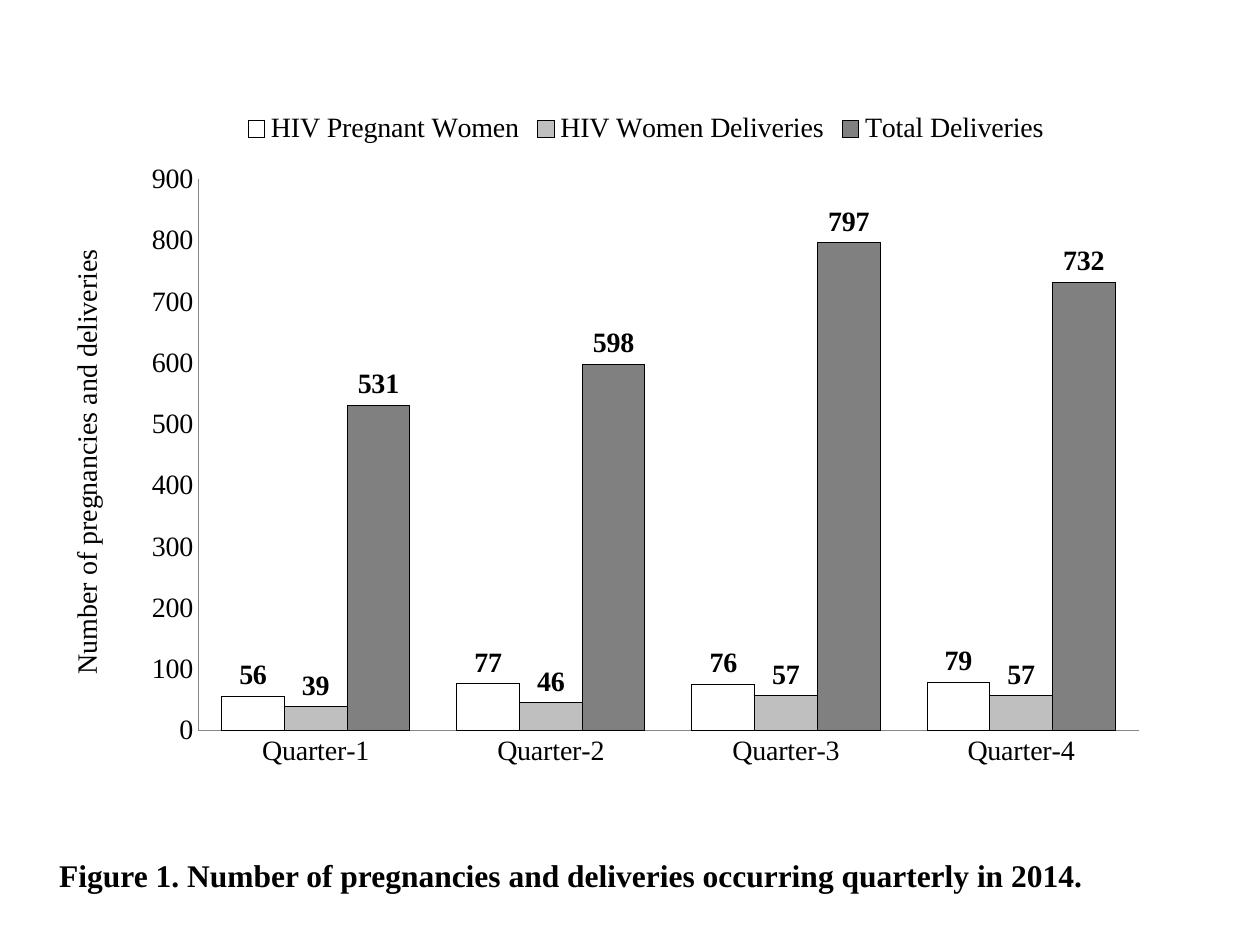
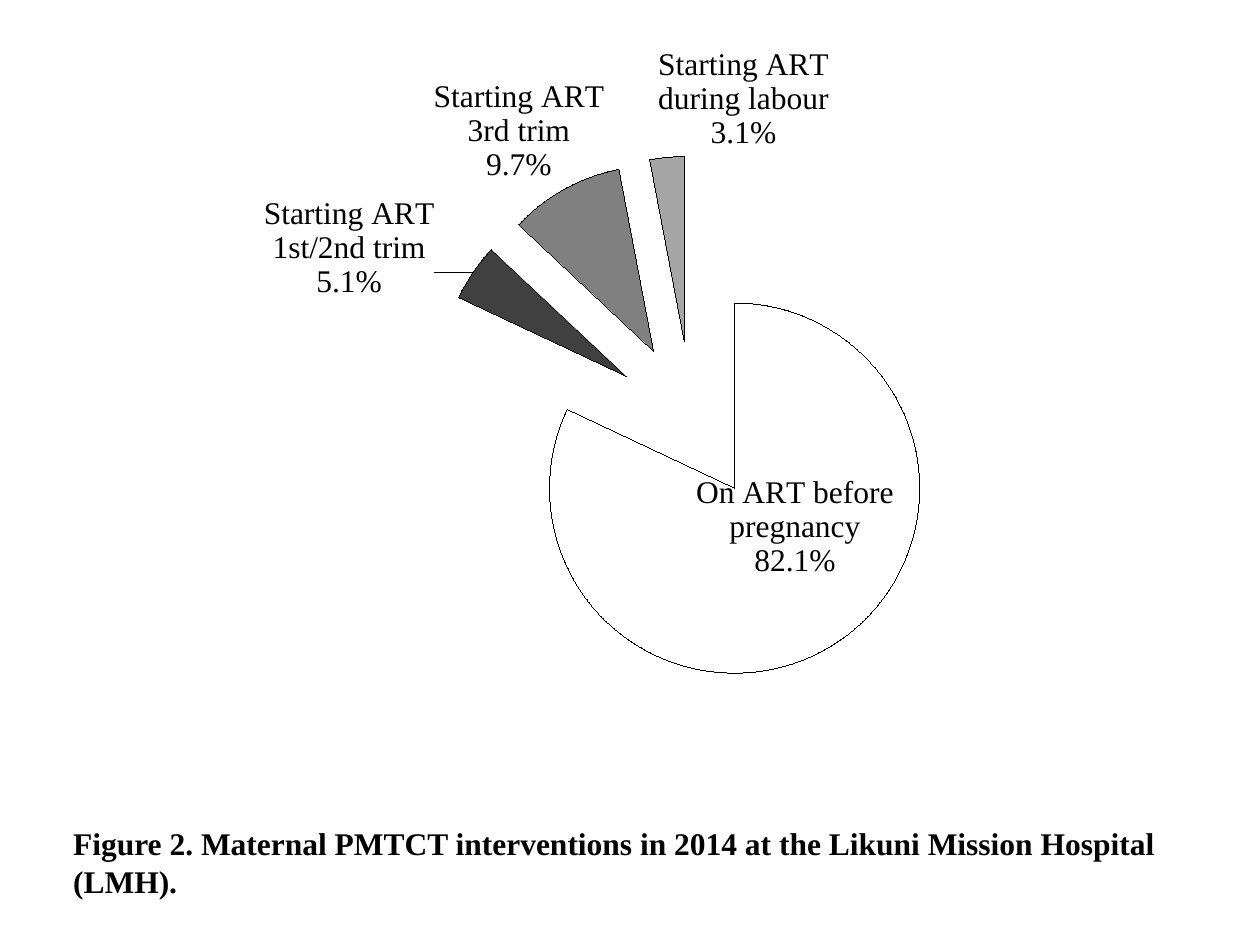
from dataclasses import dataclass

from pptx import Presentation
from pptx.chart.chart import Chart
from pptx.chart.data import CategoryChartData
from pptx.dml.color import RGBColor
from pptx.enum.chart import XL_CHART_TYPE, XL_LABEL_POSITION, XL_LEGEND_POSITION, XL_TICK_MARK
from pptx.enum.text import MSO_ANCHOR, MSO_AUTO_SIZE, PP_ALIGN
from pptx.oxml import parse_xml
from pptx.oxml.ns import nsdecls
from pptx.util import Cm, Pt

COLUMN = XL_CHART_TYPE.COLUMN_CLUSTERED
PIE = XL_CHART_TYPE.PIE
LABEL_OUTSIDE = XL_LABEL_POSITION.OUTSIDE_END
LABEL_CENTER = XL_LABEL_POSITION.CENTER
LEGEND_TOP = XL_LEGEND_POSITION.TOP
NO_TICK = XL_TICK_MARK.NONE
ANCHOR_TOP = MSO_ANCHOR.TOP
NO_AUTO_SIZE = MSO_AUTO_SIZE.NONE
ALIGN_LEFT = PP_ALIGN.LEFT
ALIGN_CENTER = PP_ALIGN.CENTER
TITLE_ONLY = 5


@dataclass(frozen=True)
class Theme:
    font: str = "Times New Roman"
    text: str = "000000"
    outline: str = "000000"
    axis: str = "868686"
    white: str = "FFFFFF"
    light: str = "BFBFBF"
    silver: str = "A6A6A6"
    gray: str = "808080"
    dark: str = "404040"
    caption_size: int = 18
    column_size: int = 16
    pie_size: int = 18


@dataclass(frozen=True)
class Box:
    left: float
    top: float
    width: float
    height: float

    def lengths(self) -> tuple:
        return Cm(self.left), Cm(self.top), Cm(self.width), Cm(self.height)


@dataclass(frozen=True)
class ColumnSeries:
    name: str
    values: tuple
    color: str


@dataclass(frozen=True)
class Slice:
    name: str
    value: int
    percent: str
    color: str
    position: object
    shift: tuple


THEME = Theme()

COLUMNS = (
    ColumnSeries("HIV Pregnant Women", (56, 77, 76, 79), THEME.white),
    ColumnSeries("HIV Women Deliveries", (39, 46, 57, 57), THEME.light),
    ColumnSeries("Total Deliveries", (531, 598, 797, 732), THEME.gray),
)

SLICES = (
    Slice("On ART before pregnancy", 82, "82.1%", THEME.white, LABEL_CENTER, (0.01, -0.05)),
    Slice("Starting ART 1st/2nd trim", 5, "5.1%", THEME.dark, LABEL_OUTSIDE, (-0.03, 0.04)),
    Slice("Starting ART 3rd trim", 10, "9.7%", THEME.gray, LABEL_OUTSIDE, (0.04, 0)),
    Slice("Starting ART during labour", 3, "3.1%", THEME.silver, LABEL_OUTSIDE, (0.15, 0)),
)


def format_font(font, size: float, bold: bool = False) -> None:
    font.name = THEME.font
    font.size = Pt(size)
    font.bold = bold
    font.color.rgb = RGBColor.from_string(THEME.text)


def write_text(text_frame, text: str, *, size: float, bold: bool = False, alignment=ALIGN_LEFT) -> None:
    text_frame.text = text
    for paragraph in text_frame.paragraphs:
        paragraph.alignment = alignment
        for run in paragraph.runs:
            format_font(run.font, size, bold)


def add_captioned_slide(presentation, caption: str, box: Box):
    slide = presentation.slides.add_slide(presentation.slide_layouts[TITLE_ONLY])
    title = slide.shapes.title
    title.left, title.top, title.width, title.height = box.lengths()
    text_frame = title.text_frame
    text_frame.word_wrap = True
    text_frame.auto_size = NO_AUTO_SIZE
    text_frame.vertical_anchor = ANCHOR_TOP
    write_text(text_frame, caption, size=THEME.caption_size, bold=True)
    return slide


def paint(chart_format, color: str) -> None:
    chart_format.fill.solid()
    chart_format.fill.fore_color.rgb = RGBColor.from_string(color)
    chart_format.line.color.rgb = RGBColor.from_string(THEME.outline)


def set_plot_area(chart: Chart, left: float, top: float, width: float, height: float) -> None:
    plot_area = chart.element.xpath("c:chart/c:plotArea")[0]
    for layout in plot_area.xpath("c:layout"):
        plot_area.remove(layout)
    plot_area.insert(0, parse_xml(
        f'<c:layout {nsdecls("c")}><c:manualLayout><c:layoutTarget val="inner"/>'
        f'<c:xMode val="edge"/><c:yMode val="edge"/><c:x val="{left}"/><c:y val="{top}"/>'
        f'<c:w val="{width}"/><c:h val="{height}"/></c:manualLayout></c:layout>'))


def add_chart(slide, chart_type, box: Box, data: CategoryChartData, size: float) -> Chart:
    chart = slide.shapes.add_chart(chart_type, *box.lengths(), data).chart
    chart.has_title = False
    chart.has_legend = False
    format_font(chart.font, size)
    return chart


def add_delivery_columns(slide, box: Box) -> None:
    data = CategoryChartData()
    data.categories = [f"Quarter-{quarter}" for quarter in range(1, 5)]
    for column in COLUMNS:
        data.add_series(column.name, column.values)
    chart = add_chart(slide, COLUMN, box, data, THEME.column_size)
    set_plot_area(chart, 0.064, 0.119, 0.916, 0.807)

    chart.has_legend = True
    chart.legend.position = LEGEND_TOP
    chart.legend.include_in_layout = False
    format_font(chart.legend.font, THEME.column_size)

    for axis in (chart.category_axis, chart.value_axis):
        axis.has_major_gridlines = False
        axis.major_tick_mark = NO_TICK
        axis.minor_tick_mark = NO_TICK
        axis.format.line.color.rgb = RGBColor.from_string(THEME.axis)
        format_font(axis.tick_labels.font, THEME.column_size)
    chart.value_axis.minimum_scale = 0
    chart.value_axis.maximum_scale = 900
    chart.value_axis.major_unit = 100

    plot = chart.plots[0]
    plot.gap_width = 75
    plot.vary_by_categories = False
    for series, column in zip(plot.series, COLUMNS):
        paint(series.format, column.color)
        series.invert_if_negative = False
        labels = series.data_labels
        labels.show_value = True
        labels.position = LABEL_OUTSIDE
        format_font(labels.font, THEME.column_size, bold=True)


def shift_label(label_element, shift: tuple) -> None:
    label_element.insert(1, parse_xml(
        f'<c:layout {nsdecls("c")}><c:manualLayout><c:x val="{shift[0]}"/>'
        f'<c:y val="{shift[1]}"/></c:manualLayout></c:layout>'))


def add_intervention_pie(slide, box: Box) -> None:
    data = CategoryChartData()
    data.categories = [piece.name for piece in SLICES]
    data.add_series("Series 1", [piece.value for piece in SLICES])
    chart = add_chart(slide, PIE, box, data, THEME.pie_size)
    set_plot_area(chart, 0.299, 0.16, 0.489, 0.672)

    series = chart.plots[0].series[0]
    paint(series.format, THEME.white)
    series_properties = chart.element.xpath(".//c:ser/c:spPr")[0]
    series_properties.addnext(parse_xml(f'<c:explosion {nsdecls("c")} val="43"/>'))

    labels = series.data_labels
    labels.show_value = False
    labels.show_percentage = True
    labels.show_category_name = True
    format_font(labels.font, THEME.pie_size)
    for index, piece in enumerate(SLICES):
        point = series.points[index]
        paint(point.format, piece.color)
        label = point.data_label
        write_text(label.text_frame, f"{piece.name}\n{piece.percent}",
                   size=THEME.pie_size, alignment=ALIGN_CENTER)
        label.position = piece.position
    for label_element, piece in zip(chart.element.xpath(".//c:dLbl"), SLICES):
        shift_label(label_element, piece.shift)


def add_axis_caption(slide, text: str, box: Box) -> None:
    shape = slide.shapes.add_textbox(*box.lengths())
    shape.rotation = 270
    shape.text_frame.word_wrap = True
    write_text(shape.text_frame, text, size=THEME.column_size, alignment=ALIGN_CENTER)


def main() -> None:
    presentation = Presentation()
    presentation.slide_width = Cm(25.4)
    presentation.slide_height = Cm(19.05)

    slide = add_captioned_slide(
        presentation,
        "Figure 1. Number of pregnancies and deliveries occurring quarterly in 2014.",
        Box(0.94, 17.12, 22.86, 1.02))
    add_delivery_columns(slide, Box(2.67, 1.98, 20.7, 13.77))
    add_axis_caption(slide, "Number of pregnancies and deliveries", Box(-4.88, 8.84, 13.23, 0.94))

    slide = add_captioned_slide(
        presentation,
        "Figure 2. Maternal PMTCT interventions in 2014 at the Likuni Mission Hospital (LMH).",
        Box(1.22, 16.48, 24.18, 1.8))
    add_intervention_pie(slide, Box(2.08, 0.61, 21.84, 15.88))

    presentation.save("out.pptx")


if __name__ == "__main__":
    main()
